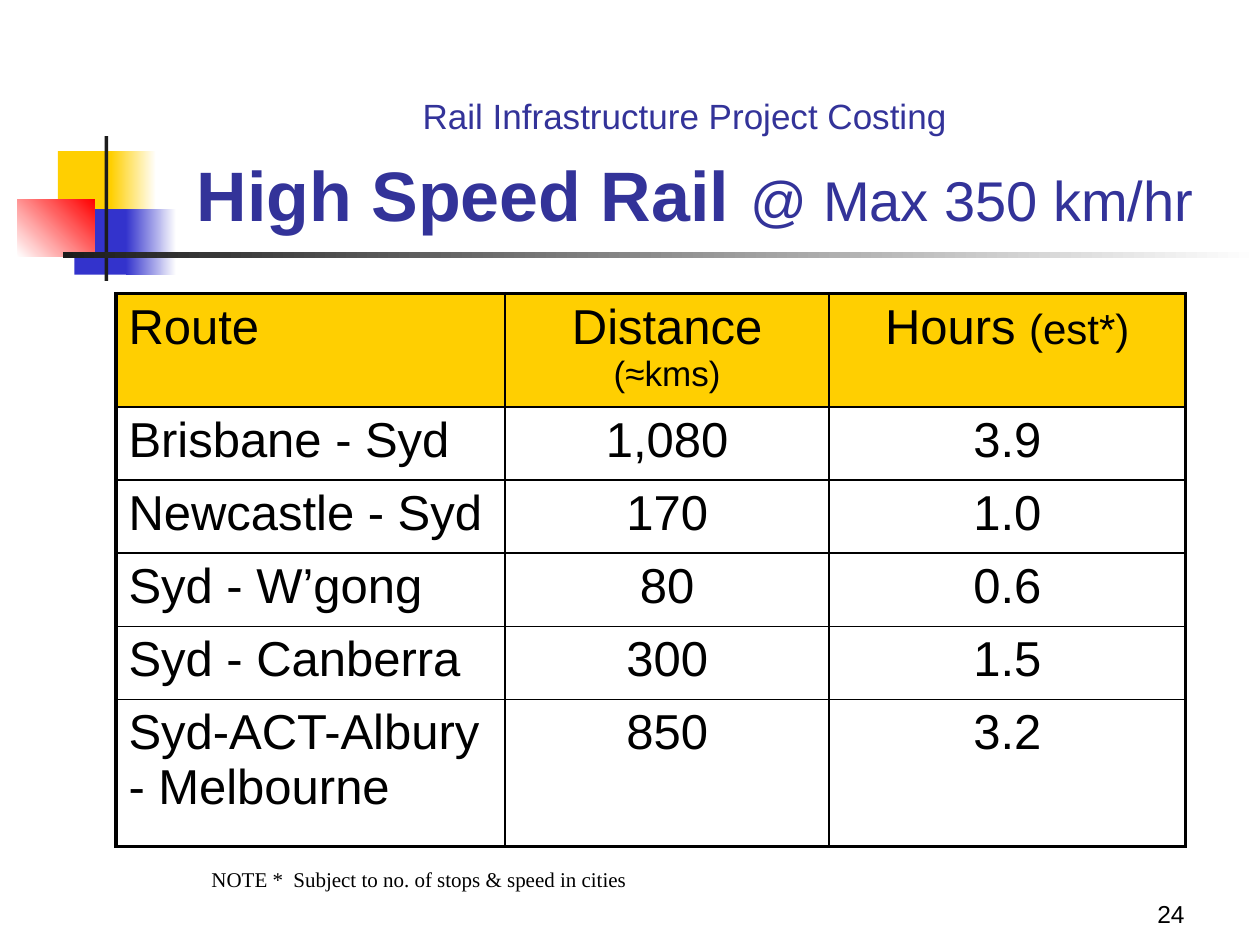
"""Build the high speed rail slide: title, decorated rule and a table of routes."""
from lxml.etree import SubElement
from pptx import Presentation
from pptx.dml.color import RGBColor
from pptx.enum.shapes import MSO_SHAPE as SHAPE
from pptx.enum.text import MSO_ANCHOR as ANCHOR, PP_ALIGN as ALIGN
from pptx.oxml.ns import qn
from pptx.util import Inches, Pt

YELLOW, BLUE, RED, DARK = "FFCF01", "3333CC", "FF0000", "1C1C1C"
WHITE, BLACK, NAVY = "FFFFFF", "000000", "333399"
DECOR = [
    ((0.46, 1.2, 0.48, 0.52), [YELLOW], 0),
    ((0.88, 1.2, 0.36, 0.52), [YELLOW, WHITE], 0),
    ((0.59, 1.66, 0.46, 0.52), [BLUE], 0),
    ((1, 1.66, 0.4, 0.52), [BLUE, WHITE], 0),
    ((0.14, 1.58, 0.61, 0.46), [WHITE, RED], 45),
    ((0.83, 1.08, 0.03, 1.15), [DARK], 0),
    ((0.5, 2, 9.5, 0.05), [DARK, WHITE], 0),
]
TITLE = [("Rail Infrastructure Project Costing", 20, False), (" ", 44, False), None,
         ("High Speed Rail", 40, True), (" ", 44, False), ("@ Max 350 km/hr", 32, False)]
HEADER = [[("Route", 28)], [("Distance ", 28), ("(≈kms)", 20)],
          [("Hours ", 28), ("(est*)", 24)]]
ROUTES = [
    ("Brisbane - Syd", "1,080", "3.9"),
    ("Newcastle - Syd", "170", "1.0"),
    ("Syd - W’gong", "80", "0.6"),
    ("Syd - Canberra", "300", "1.5"),
    ("Syd-ACT-Albury - Melbourne", "850", "3.2"),
]
COLS = [3.09, 2.57, 2.83]
ROWS = [0.84] + [0.58] * 4 + [1.17]
THIN, THICK = 1, 2.25


def rgb(color):
    return RGBColor.from_string(color)


def add_run(p, text, size, color=BLACK, bold=False, font="Arial"):
    r = p.add_run()
    r.text = text
    r.font.size, r.font.bold, r.font.name = Pt(size), bold, font
    r.font.color.rgb = rgb(color)


def add_text(s, box, align, anchor, wrap=True):
    tf = s.shapes.add_textbox(*map(Inches, box)).text_frame
    tf.word_wrap, tf.vertical_anchor = wrap, anchor
    p = tf.paragraphs[0]
    p.alignment = align
    return p


def add_block(s, box, colors, angle):
    sp = s.shapes.add_shape(SHAPE.RECTANGLE, *map(Inches, box))
    sp.shadow.inherit = False
    sp.line.fill.background()
    if len(colors) == 1:
        sp.fill.solid()
        sp.fill.fore_color.rgb = rgb(colors[0])
        return
    sp.fill.gradient()
    sp.fill.gradient_angle = angle
    for stop, color in zip(sp.fill.gradient_stops, colors):
        stop.color.rgb = rgb(color)


def set_borders(cell, widths):
    tc_pr = cell._tc.get_or_add_tcPr()
    for i, (side, width) in enumerate(widths.items()):
        ln = SubElement(tc_pr, qn(f"a:ln{side}"), w=str(Pt(width)))
        SubElement(SubElement(ln, qn("a:solidFill")), qn("a:srgbClr"), val=BLACK)
        tc_pr.insert(i, ln)


def add_routes(s):
    rows = HEADER, *([[(text, 28)] for text in route] for route in ROUTES)
    frame = s.shapes.add_table(len(ROWS), len(COLS), Inches(0.92), Inches(2.33),
                               Inches(sum(COLS)), Inches(sum(ROWS)))
    table = frame.table
    for col, width in zip(table.columns, COLS):
        col.width = Inches(width)
    for i, (height, row) in enumerate(zip(ROWS, rows)):
        table.rows[i].height = Inches(height)
        for j, runs in enumerate(row):
            cell = table.cell(i, j)
            cell.fill.solid()
            cell.fill.fore_color.rgb = rgb(WHITE if i else YELLOW)
            outer = {"L": j == 0, "R": j == len(COLS) - 1,
                     "T": i == 0, "B": i == len(ROWS) - 1}
            set_borders(cell, {k: THICK if edge else THIN for k, edge in outer.items()})
            p = cell.text_frame.paragraphs[0]
            p.alignment = ALIGN.CENTER if j else ALIGN.LEFT
            for text, size in runs:
                add_run(p, text, size)


def main():
    prs = Presentation()
    prs.slide_width, prs.slide_height = Inches(10), Inches(7.5)
    s = prs.slides.add_slide(prs.slide_layouts[6])
    for block in DECOR:
        add_block(s, *block)
    p = add_text(s, (7.42, 6.92, 2.08, 0.5), ALIGN.RIGHT, ANCHOR.BOTTOM)
    add_run(p, "24", 14)
    p = add_text(s, (1.26, 0.68, 8.52, 1.25), ALIGN.CENTER, ANCHOR.BOTTOM)
    for part in TITLE:
        if part is None:
            p.add_line_break()
        else:
            text, size, bold = part
            add_run(p, text, size, NAVY, bold)
    add_routes(s)
    p = add_text(s, (1.58, 6.83, 3.5, 0.3), ALIGN.LEFT, ANCHOR.TOP, wrap=False)
    add_run(p, "NOTE *  Subject to no. of stops & speed in cities", 12,
            font="Times New Roman")
    prs.save("out.pptx")


if __name__ == "__main__":
    main()
